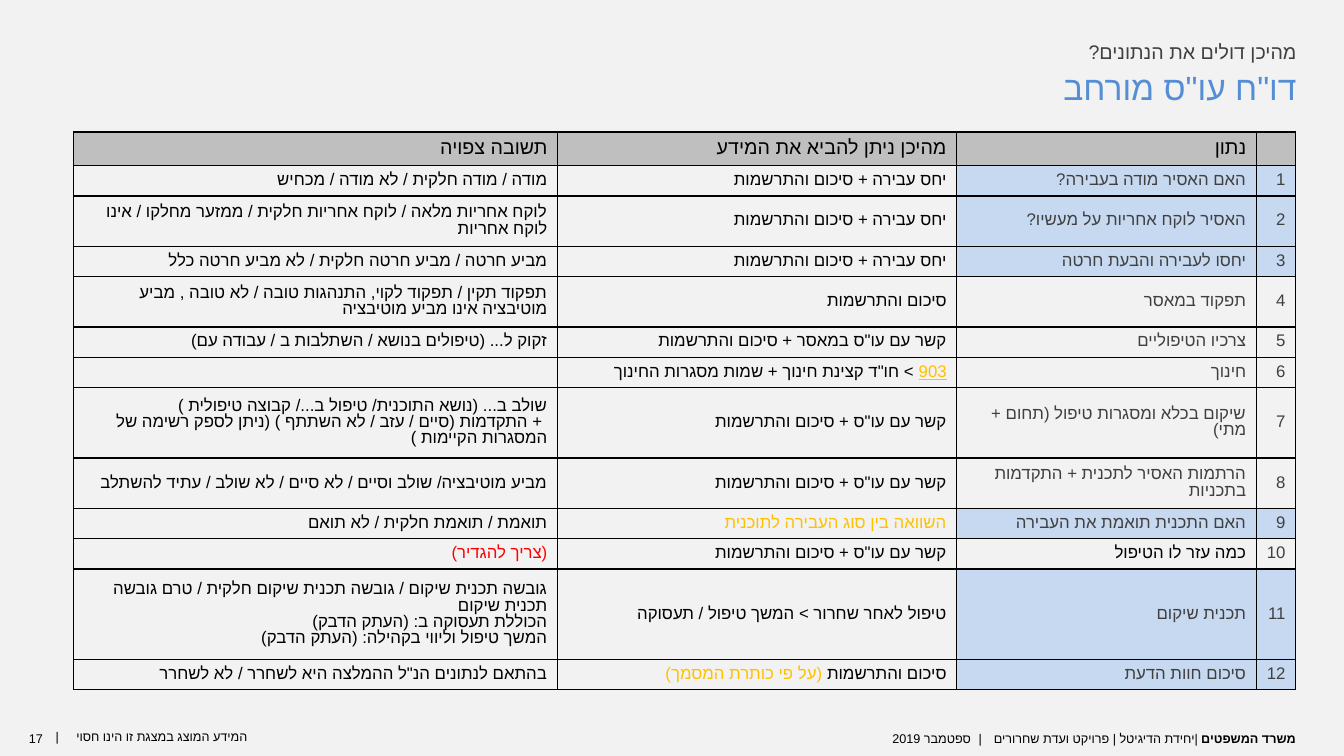
from lxml.etree import SubElement
from pptx import Presentation
from pptx.dml.color import RGBColor
from pptx.enum.text import MSO_ANCHOR, PP_ALIGN
from pptx.oxml.ns import qn
from pptx.util import Inches, Pt

COLORS = {"bg": "F2F2F2", "black": "000000", "gray": "404040", "title": "558ED5",
          "header": "BFBFBF", "blue": "C6D9F1", "gold": "FFC000", "red": "FF0000"}

TITLE = 'דו"ח עו"ס מורחב'
SUBTITLE = "מהיכן דולים את הנתונים?"

# A text is a string, or a list of (text, format) runs
FOOTERS = [
    ((0.03, 7.18, 0.65, 0.31), (0.15, 0.07), PP_ALIGN.CENTER, "17"),
    ((0.21, 7.18, 2.34, 0.31), (0.1, 0.05), PP_ALIGN.RIGHT,
     [("המידע המוצג במצגת זו הינו חסוי", {}), (" ", {"spacing": 10}), ("|", {})]),
    ((3.78, 7.18, 9.22, 0.3), (0.15, 0.07), PP_ALIGN.RIGHT,
     [("משרד המשפטים ", {"bold": True}),
      ("|יחידת הדיגיטל | פרויקט ועדת שחרורים", {}),
      (" | ", {"spacing": 3}), ("ספטמבר 2019", {})]),
]

HEADERS = ["תשובה צפויה", "מהיכן ניתן להביא את המידע", "נתון", ""]
OFFENCE = "יחס עבירה + סיכום והתרשמות"
WORKER = 'קשר עם עו"ס + סיכום והתרשמות'
SUMMARY = "סיכום והתרשמות"

# Expected answer, where it comes from, the datum
ROWS = [
    ("מודה / מודה חלקית / לא מודה / מכחיש", OFFENCE, "האם האסיר מודה בעבירה?"),
    ("לוקח אחריות מלאה / לוקח אחריות חלקית / ממזער מחלקו / אינו לוקח אחריות",
     OFFENCE, "האסיר לוקח אחריות על מעשיו?"),
    ("מביע חרטה / מביע חרטה חלקית / לא מביע חרטה כלל", OFFENCE, "יחסו לעבירה והבעת חרטה"),
    ("תפקוד תקין / תפקוד לקוי, התנהגות טובה / לא טובה , מביע מוטיבציה אינו מביע מוטיבציה",
     SUMMARY, "תפקוד במאסר"),
    ("זקוק ל... (טיפולים בנושא / השתלבות ב / עבודה עם)",
     'קשר עם עו"ס במאסר + סיכום והתרשמות', "צרכיו הטיפוליים"),
    ("", [("903", {"color": "gold", "underline": True}),
          (' > חו"ד קצינת חינוך + שמות מסגרות החינוך', {})], "חינוך"),
    ("שולב ב... (נושא התוכנית/ טיפול ב.../ קבוצה טיפולית )\n"
     " + התקדמות (סיים / עזב / לא השתתף ) (ניתן לספק רשימה של המסגרות הקיימות )",
     WORKER, "שיקום בכלא ומסגרות טיפול (תחום + מתי)"),
    ("מביע מוטיבציה/ שולב וסיים / לא סיים / לא שולב / עתיד להשתלב",
     WORKER, "הרתמות האסיר לתכנית + התקדמות בתכניות"),
    ("תואמת / תואמת חלקית / לא תואם",
     [("השוואה בין סוג העבירה לתוכנית", {"color": "gold"})], "האם התכנית תואמת את העבירה"),
    ([("(צריך להגדיר)", {"color": "red"})], WORKER,
     [("כמה עזר לו הטיפול", {"color": "black"})]),
    ("גובשה תכנית שיקום / גובשה תכנית שיקום חלקית / טרם גובשה תכנית שיקום\n"
     "הכוללת תעסוקה ב: (העתק הדבק)\n"
     "המשך טיפול וליווי בקהילה: (העתק הדבק)",
     "טיפול לאחר שחרור > המשך טיפול / תעסוקה", "תכנית שיקום"),
    ('בהתאם לנתונים הנ"ל ההמלצה היא לשחרר / לא לשחרר',
     [(SUMMARY + " ", {}), ("(על פי כותרת המסמך)", {"color": "gold"})], "סיכום חוות הדעת"),
]
BLUE_ROWS = {1, 2, 3, 9, 11, 12}
COL_WIDTHS = [4.8, 3.96, 2.97, 0.39]
HEADER_HEIGHT = 0.33
ROW_HEIGHTS = {1: 0.3, 2: 0.5, 3: 0.7, 4: 0.9}  # by number of text lines
ROW_LINES = [1, 2, 1, 2, 1, 1, 3, 2, 1, 1, 4, 1]


def rgb(name):
    return RGBColor.from_string(COLORS[name])


def write(tf, text, size, font, color="black", align=PP_ALIGN.RIGHT, line_spacing=None):
    """Fill a text frame with right-to-left paragraphs."""
    tf.word_wrap = True
    paragraphs = ([[(line, {})] for line in text.split("\n")]
                  if isinstance(text, str) else [text])
    for i, runs in enumerate(paragraphs):
        p = tf.add_paragraph() if i else tf.paragraphs[0]
        p.alignment, p.line_spacing = align, line_spacing
        p._p.get_or_add_pPr().set("rtl", "1")
        for content, extra in runs:
            if not content:
                SubElement(p._p, qn("a:endParaRPr"), sz=str(size * 100))
                continue
            fmt = {"size": Pt(size), "name": font, "bold": False, **extra}
            r = p.add_run()
            r.text = content
            r.font.color.rgb = rgb(fmt.pop("color", color))
            spacing = fmt.pop("spacing", 0)
            for key, value in fmt.items():
                setattr(r.font, key, value)
            rPr = r._r.get_or_add_rPr()
            rPr.set("lang", "he-IL")
            if spacing:
                rPr.set("spc", str(spacing * 100))
            SubElement(rPr, qn("a:cs"), typeface="Arial")


def add_text(box, text, size, font, color="black", align=PP_ALIGN.RIGHT, insets=(0.1, 0.05)):
    tf = s.shapes.add_textbox(*map(Inches, box)).text_frame
    tf.margin_left = tf.margin_right = Inches(insets[0])
    tf.margin_top = tf.margin_bottom = Inches(insets[1])
    write(tf, text, size, font, color, align)


def add_borders(cell):
    tcPr = cell._tc.get_or_add_tcPr()
    for side in ("lnL", "lnR", "lnT", "lnB"):
        ln = SubElement(tcPr, qn("a:" + side), w=str(Pt(1)))
        fill = SubElement(ln, qn("a:solidFill"))
        SubElement(fill, qn("a:srgbClr"), val=COLORS["black"])


def fill_cell(cell, text, size, color, fill):
    add_borders(cell)
    cell.vertical_anchor = MSO_ANCHOR.MIDDLE
    if fill:
        cell.fill.solid()
        cell.fill.fore_color.rgb = rgb(fill)
    else:
        cell.fill.background()
    write(cell.text_frame, text, size, "Arial", color, line_spacing=0.86)


prs = Presentation()
prs.slide_width, prs.slide_height = Inches(13.33), Inches(7.5)
s = prs.slides.add_slide(prs.slide_layouts[5])
s.background.fill.solid()
s.background.fill.fore_color.rgb = rgb("bg")

# Footer
for box, insets, align, text in FOOTERS:
    add_text(box, text, 9, "Calibri", align=align, insets=insets)

# Heading
add_text((9.52, 0.35, 3.44, 0.34), SUBTITLE, 14, "Roboto", "gray")
title = s.shapes.title
title.left, title.top, title.width, title.height = map(Inches, (6.57, 0.61, 6.39, 0.5))
title.text_frame.vertical_anchor = MSO_ANCHOR.TOP
write(title.text_frame, TITLE, 24, "Roboto", "title")

# Table
heights = [HEADER_HEIGHT] + [ROW_HEIGHTS[n] for n in ROW_LINES]
table = s.shapes.add_table(len(heights), len(COL_WIDTHS), Inches(0.73), Inches(1.31),
                           Inches(sum(COL_WIDTHS)), Inches(sum(heights))).table
table.first_row = table.horz_banding = False
for column, width in zip(table.columns, COL_WIDTHS):
    column.width = Inches(width)
for row, height in zip(table.rows, heights):
    row.height = Inches(height)

for c, text in enumerate(HEADERS):
    fill_cell(table.cell(0, c), text, 14, "black", "header")
for n, row in enumerate(ROWS, 1):
    for c, text in enumerate((*row, str(n))):
        is_datum = c >= 2
        fill = "blue" if is_datum and n in BLUE_ROWS else None
        fill_cell(table.cell(n, c), text, 12, "gray" if is_datum else "black", fill)

prs.save("out.pptx")
